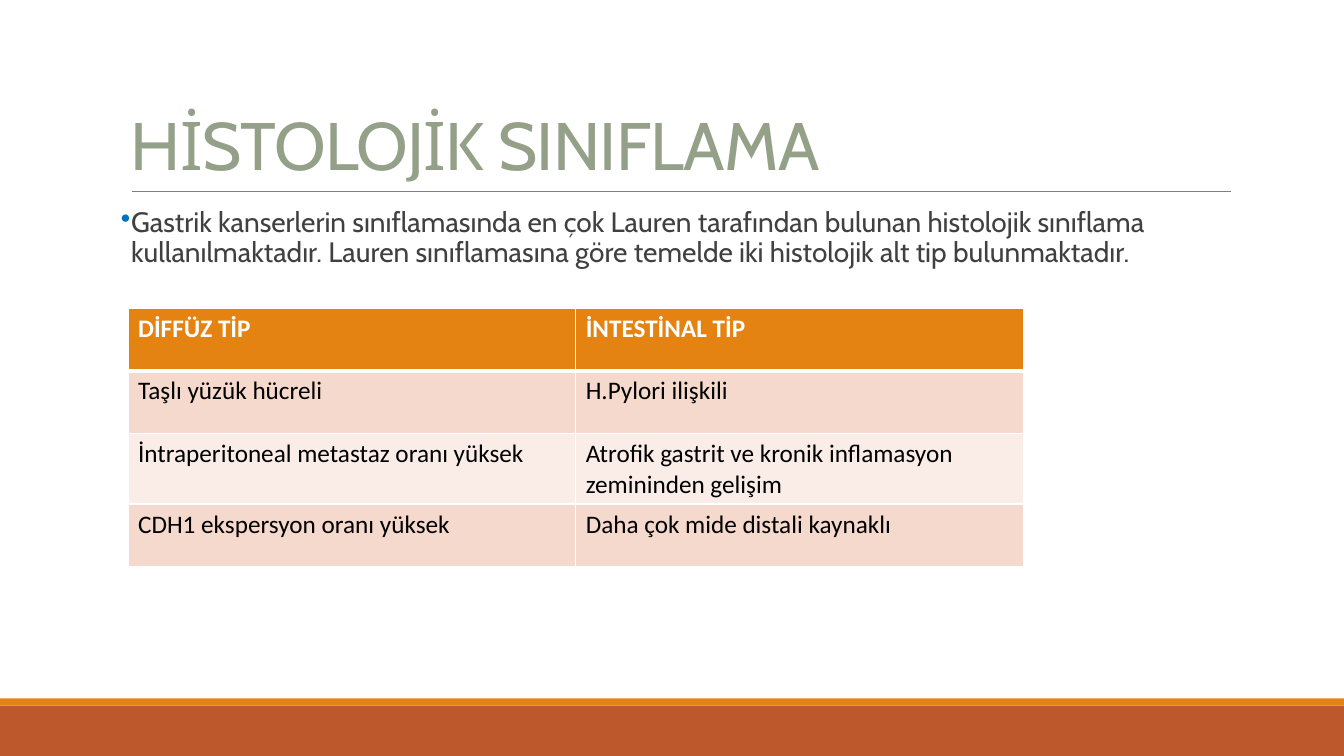
"""Build the slide on the histological classification of gastric cancer."""
from lxml import etree
from pptx import Presentation
from pptx import util as u
from pptx.dml.color import RGBColor
from pptx.enum import shapes, text
from pptx.oxml.ns import qn


def color(hex_code):
    return RGBColor.from_string(hex_code)


def style(paragraph, font_name, size, hex_code, bold=False):
    font = paragraph.runs[0].font
    font.name, font.size, font.bold = font_name, u.Pt(size), bold
    font.color.rgb = color(hex_code)


deck = Presentation()
deck.slide_width, deck.slide_height = u.Inches(13.33), u.Inches(7.5)
slide = deck.slides.add_slide(deck.slide_layouts[6])

for top, height, band_color in [(7, 0.5, "BD582C"), (6.93, 0.07, "E48312")]:
    band = slide.shapes.add_shape(
        shapes.MSO_SHAPE.RECTANGLE, 0, u.Inches(top), deck.slide_width, u.Inches(height))
    band.shadow.inherit = False
    band.fill.solid()
    band.fill.fore_color.rgb = color(band_color)
    band.line.fill.background()

title_rule = slide.shapes.add_connector(
    shapes.MSO_CONNECTOR.STRAIGHT, u.Inches(1.31), u.Inches(1.9), u.Inches(12.21), u.Inches(1.9))
title_rule.line.color.rgb = color("808080")
title_rule.line.width = u.Pt(0.5)
etree.SubElement(title_rule._element.spPr, qn("a:effectLst"))

title = slide.shapes.add_textbox(
    u.Inches(1.2), u.Inches(0.29), u.Inches(11), u.Inches(1.59)).text_frame
title.word_wrap = True
title.vertical_anchor = text.MSO_ANCHOR.BOTTOM
title.text = "HİSTOLOJİK SINIFLAMA"
heading = title.paragraphs[0]
heading.line_spacing = 0.85
style(heading, "Cabin", 48, "94A088")
heading.runs[0].font._element.set("spc", "-50")

body = slide.shapes.add_textbox(
    u.Inches(1.2), u.Inches(2.02), u.Inches(11), u.Inches(4.4)).text_frame
body.word_wrap = True
body.margin_left = body.margin_right = 0
body.text = (
    "Gastrik kanserlerin sınıflamasında en çok Lauren tarafından bulunan histolojik sınıflama "
    "kullanılmaktadır. Lauren sınıflamasına göre temelde iki histolojik alt tip bulunmaktadır.")
intro = body.paragraphs[0]
intro.line_spacing = 0.9
intro.space_before, intro.space_after = u.Pt(12), u.Pt(2)
style(intro, "Cabin", 20, "404040")
bullet_format = intro._p.get_or_add_pPr()
bullet_format.set("marL", str(u.Inches(0.1)))
bullet_format.set("indent", str(u.Inches(-0.1)))
bullet_color = etree.SubElement(bullet_format, qn("a:buClr"))
etree.SubElement(bullet_color, qn("a:srgbClr"), val="0070C0")
etree.SubElement(bullet_format, qn("a:buChar"), char="•")

types = [
    ("DİFFÜZ TİP", "İNTESTİNAL TİP"),
    ("Taşlı yüzük hücreli", "H.Pylori ilişkili"),
    ("İntraperitoneal metastaz oranı yüksek",
     "Atrofik gastrit ve kronik inflamasyon zemininden gelişim"),
    ("CDH1 ekspersyon oranı yüksek", "Daha çok mide distali kaynaklı"),
]
row_fills = ["E48312", "F5D9CC", "FAEDE7", "F5D9CC"]
comparison = slide.shapes.add_table(
    len(types), 2, u.Inches(1.27), u.Inches(3.06), u.Inches(8.88), u.Inches(2.48)).table
comparison.first_row = comparison.horz_banding = False

for row, (features, row_fill) in enumerate(zip(types, row_fills)):
    comparison.rows[row].height = u.Inches(0.62)
    header = row == 0
    for column, feature in enumerate(features):
        cell = comparison.cell(row, column)
        cell.text = feature
        style(cell.text_frame.paragraphs[0], "Calibri", 18,
              "FFFFFF" if header else "000000", header)
        for side in "LRTB":
            thick = (row, side) in [(0, "B"), (1, "T")]
            border = etree.SubElement(cell._tc.get_or_add_tcPr(), qn(f"a:ln{side}"),
                                      w=str(u.Pt(3 if thick else 1)))
            border_fill = etree.SubElement(border, qn("a:solidFill"))
            etree.SubElement(border_fill, qn("a:srgbClr"), val="FFFFFF")
        cell.fill.solid()
        cell.fill.fore_color.rgb = color(row_fill)

deck.save("out.pptx")
